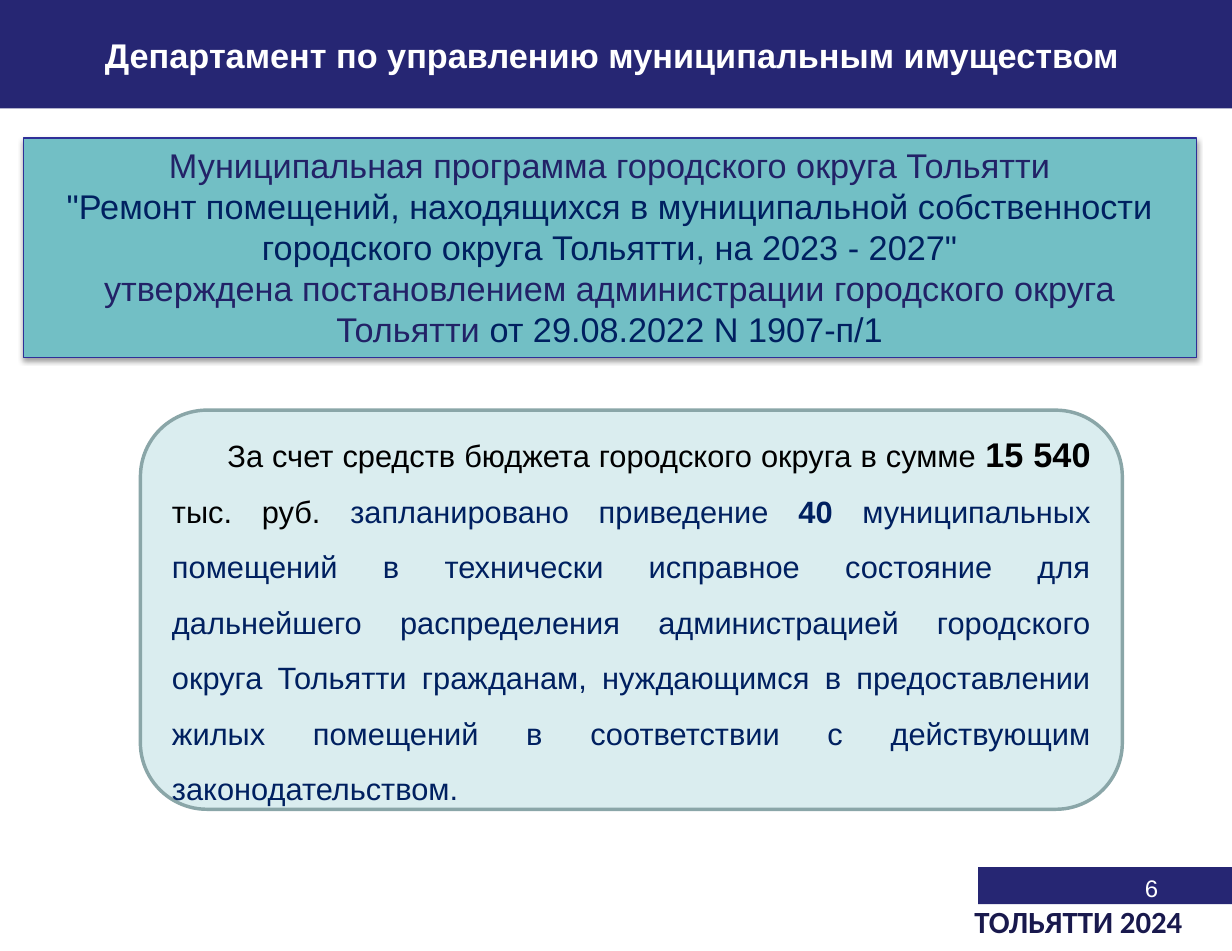
import pptx
import pptx.dml.color
import pptx.enum.shapes
import pptx.enum.text
import pptx.oxml
import pptx.oxml.ns
import pptx.util
from dataclasses import dataclass

Inches = pptx.util.Inches
Pt = pptx.util.Pt
RGB = pptx.dml.color.RGBColor.from_string
MSO = pptx.enum.shapes.MSO_SHAPE
ALIGN = pptx.enum.text.PP_ALIGN
ANCHOR = pptx.enum.text.MSO_ANCHOR


@dataclass(frozen=True)
class Theme:
    """Colours, fonts and type sizes of the slide."""
    navy: str = "262673"
    footer: str = "19194D"
    white: str = "FFFFFF"
    black: str = "000000"
    ink: str = "222267"
    blue: str = "002060"
    teal: str = "72BFC5"
    teal_line: str = "2F2F98"
    pale: str = "DAEDEF"
    pale_line: str = "8AA6A8"
    font: str = "Arial"
    footer_font: str = "Calibri"
    large: int = 20
    body: int = 18
    small: int = 14


T = Theme()


def add_box(s, kind, box, fill, line=None, width=0):
    """Add a filled preset shape without a shadow."""
    sp = s.shapes.add_shape(kind, *map(Inches, box))
    sp.shadow.inherit = False
    sp.fill.solid()
    sp.fill.fore_color.rgb = RGB(fill)
    if line:
        sp.line.color.rgb = RGB(line)
        sp.line.width = Pt(width)
    else:
        sp.line.fill.background()
    return sp


def add_label(s, box):
    """Add an empty text box."""
    return s.shapes.add_textbox(*map(Inches, box))


def write(sp, paragraphs, frame=None, para=None, font=T.font):
    """Fill a shape with paragraphs of (text, size, colour, bold) runs."""
    tf = sp.text_frame
    for key, value in {"word_wrap": True, **(frame or {})}.items():
        setattr(tf, key, value)
    for i, runs in enumerate(paragraphs):
        p = tf.add_paragraph() if i else tf.paragraphs[0]
        for key, value in (para or {}).items():
            setattr(p, key, value)
        for text, size, color, bold in runs:
            r = p.add_run()
            r.text = text
            for key, value in {"name": font, "size": Pt(size), "bold": bold}.items():
                setattr(r.font, key, value)
            r.font.color.rgb = RGB(color)


def add_shadow(sp):
    """Give a shape a soft shadow below it."""
    effects = sp._element.spPr.find(pptx.oxml.ns.qn("a:effectLst"))
    effects.append(pptx.oxml.parse_xml(
        f'<a:outerShdw {pptx.oxml.ns.nsdecls("a")} blurRad="{Pt(3.1)}" dist="{Pt(1.6)}" '
        f'dir="5400000" rotWithShape="0"><a:srgbClr val="{T.black}">'
        '<a:alpha val="38000"/></a:srgbClr></a:outerShdw>'))


def header(s, box):
    """Draw the title band."""
    sp = add_box(s, MSO.RECTANGLE, box, T.navy)
    write(sp, [[("Департамент по управлению муниципальным имуществом", T.large, T.white, True)]],
          {"vertical_anchor": ANCHOR.MIDDLE, "margin_left": Inches(0.1),
           "margin_right": Inches(0.16), "margin_top": Inches(0.12)},
          {"alignment": ALIGN.CENTER, "line_spacing": 0.8})


def programme(s, box):
    """Draw the panel that names the programme."""
    sp = add_box(s, MSO.RECTANGLE, box, T.teal, T.teal_line, 0.75)
    add_shadow(sp)
    write(sp, [
        [("Муниципальная программа городского округа Тольятти", T.large, T.ink, False)],
        [("\"Ремонт помещений, находящихся в муниципальной собственности "
          "городского округа Тольятти, на 2023 - 2027\"", T.large, T.blue, False)],
        [("утверждена постановлением администрации городского округа Тольятти ",
          T.large, T.ink, False),
         ("от 29.08.2022 N 1907-п/1", T.large, T.blue, False)],
    ], {"vertical_anchor": ANCHOR.TOP}, {"alignment": ALIGN.CENTER})


def funding(s, box):
    """Draw the rounded panel with the planned spending."""
    sp = add_box(s, MSO.ROUNDED_RECTANGLE, box, T.pale, T.pale_line, 2)
    write(sp, [[
        ("За счет средств бюджета городского округа в сумме ", T.body, T.black, False),
        ("15 540 ", T.large, T.black, True),
        ("тыс. руб. ", T.body, T.black, False),
        ("запланировано приведение ", T.body, T.blue, False),
        ("40", T.body, T.blue, True),
        (" муниципальных помещений в технически исправное состояние для дальнейшего "
         "распределения администрацией городского округа Тольятти гражданам, "
         "нуждающимся в предоставлении жилых помещений в соответствии с действующим "
         "законодательством.", T.body, T.blue, False),
    ]], {"vertical_anchor": ANCHOR.MIDDLE},
        {"alignment": ALIGN.JUSTIFY, "line_spacing": 1.5})
    sp.text_frame.paragraphs[0]._p.get_or_add_pPr().set("indent", str(Inches(0.45)))


def footer(s, box):
    """Draw the page number band and the city label under it."""
    x, y, w, h = box
    add_box(s, MSO.RECTANGLE, (x, y, w, 0.3), T.navy)
    write(add_label(s, (x, y, w - 0.5, 0.3)), [[("6", T.small, T.white, False)]],
          para={"alignment": ALIGN.RIGHT})
    write(add_label(s, (x - 0.13, y + 0.3, w + 0.13, h - 0.3)),
          [[("ТОЛЬЯТТИ 2024", T.body, T.footer, True)]],
          para={"line_spacing": 0.8}, font=T.footer_font)


def main():
    """Build and save the slide."""
    prs = pptx.Presentation()
    prs.slide_width, prs.slide_height = Inches(10), Inches(7.72)
    s = prs.slides.add_slide(prs.slide_layouts[6])
    header(s, (0, 0, 10, 0.88))
    programme(s, (0.19, 1.12, 9.52, 1.78))
    funding(s, (1.14, 3.33, 7.97, 3.24))
    footer(s, (7.94, 7.04, 2.06, 0.65))
    prs.save("out.pptx")


if __name__ == "__main__":
    main()
